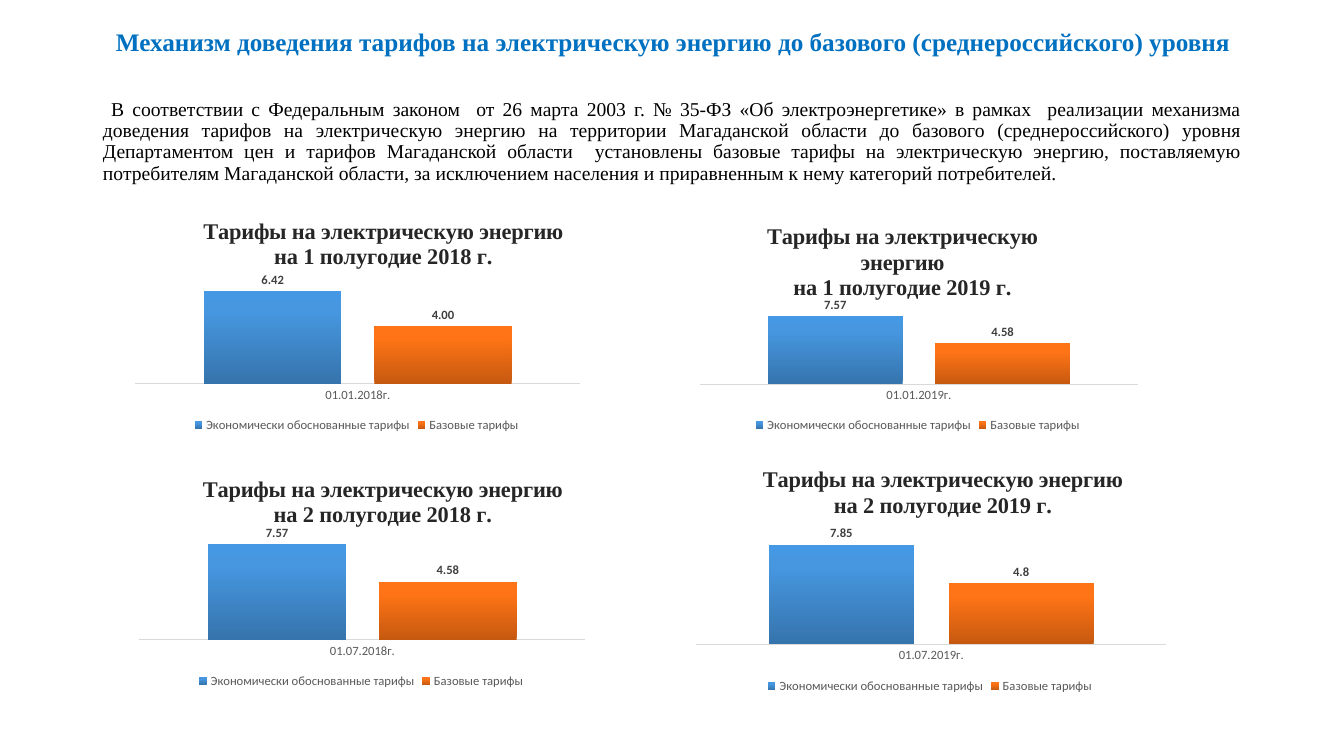
from dataclasses import dataclass
from typing import Any

from pptx import Presentation
from pptx.chart.data import CategoryChartData
from pptx.dml.color import RGBColor
from pptx.enum.chart import XL_CHART_TYPE, XL_LABEL_POSITION, XL_LEGEND_POSITION, XL_TICK_MARK
from pptx.enum.text import MSO_ANCHOR, MSO_AUTO_SIZE, PP_ALIGN
from pptx.oxml import parse_xml
from pptx.oxml.ns import nsdecls
from pptx.util import Cm, Pt

COLUMNS = XL_CHART_TYPE.COLUMN_CLUSTERED
OUTSIDE_END = XL_LABEL_POSITION.OUTSIDE_END
BOTTOM = XL_LEGEND_POSITION.BOTTOM
NO_TICK = XL_TICK_MARK.NONE
MIDDLE, TOP = MSO_ANCHOR.MIDDLE, MSO_ANCHOR.TOP
NO_FIT = MSO_AUTO_SIZE.NONE
CENTER, JUSTIFY = PP_ALIGN.CENTER, PP_ALIGN.JUSTIFY

BLUE = RGBColor(0x00, 0x70, 0xC0)
BLACK = RGBColor(0x00, 0x00, 0x00)
TITLE_GRAY = RGBColor(0x26, 0x26, 0x26)
LABEL_GRAY = RGBColor(0x40, 0x40, 0x40)
AXIS_GRAY = RGBColor(0x59, 0x59, 0x59)
LINE_GRAY = RGBColor(0xD9, 0xD9, 0xD9)
JUSTIFIED_BLUES = (
    RGBColor(0x36, 0x74, 0xAD), RGBColor(0x46, 0x97, 0xE0), RGBColor(0x44, 0x98, 0xE4))
BASE_ORANGES = (
    RGBColor(0xC6, 0x59, 0x10), RGBColor(0xFF, 0x74, 0x16), RGBColor(0xFF, 0x75, 0x17))
GRADIENT_STOPS = (0, 80, 100)

SERIF, SANS = "Times New Roman", "Calibri"
HEADING = "Механизм доведения тарифов на электрическую энергию до базового (среднероссийского) уровня"
INTRO = (
    " В соответствии с Федеральным законом  от 26 марта 2003 г. № 35-ФЗ «Об электроэнергетике» "
    "в рамках  реализации механизма доведения тарифов на электрическую энергию на территории "
    "Магаданской области до базового (среднероссийского) уровня Департаментом цен и тарифов "
    "Магаданской области  установлены базовые тарифы на электрическую энергию, поставляемую "
    "потребителям Магаданской области, за исключением населения и приравненным к нему категорий "
    "потребителей."
)


@dataclass(frozen=True)
class TextFormat:
    font: str
    size: float
    color: RGBColor
    bold: bool = False


@dataclass(frozen=True)
class TextBlock:
    text: str
    position: dict[str, Any]
    frame: dict[str, Any]
    para: dict[str, Any]
    style: TextFormat


@dataclass(frozen=True)
class TariffChart:
    half: int
    year: int
    left: float
    top: float
    width: float
    height: float
    justified: float
    base: float
    base_format: str
    title_at: tuple[float, float]
    plot_top: float
    plot_height: float


TEXT_BLOCKS = (
    TextBlock(
        HEADING,
        {"left": Cm(2.36), "top": Cm(0.38), "width": Cm(29.21), "height": Cm(2.21)},
        {"vertical_anchor": MIDDLE, "margin_bottom": Cm(0.92)},
        {"alignment": CENTER, "line_spacing": 0.9},
        TextFormat(SERIF, 18, BLUE, True),
    ),
    TextBlock(
        INTRO,
        {"left": Cm(2.34), "top": Cm(2.38), "width": Cm(29.21), "height": Cm(2.87)},
        {"vertical_anchor": TOP},
        {"alignment": JUSTIFY, "line_spacing": 0.9, "space_before": Pt(10)},
        TextFormat(SERIF, 14, BLACK),
    ),
)
CHARTS = (
    TariffChart(1, 2018, 3.18, 5.23, 11.68, 5.77, 6.42, 4, "0.00", (0.16, 0.03), 0.33, 0.44),
    TariffChart(2, 2018, 3.28, 11.68, 11.71, 5.77, 7.57, 4.58, "General", (0.15, 0.04), 0.33, 0.44),
    TariffChart(1, 2019, 17.42, 5.31, 11.48, 5.69, 7.57, 4.58, "General", (0.16, 0.04), 0.45, 0.32),
    TariffChart(2, 2019, 17.3, 11.48, 12.34, 6.1, 7.85, 4.8, "General", (0.15, 0.03), 0.36, 0.42),
)


def apply(target: Any, values: dict[str, Any]) -> None:
    for name, value in values.items():
        setattr(target, name, value)


def format_font(font: Any, style: TextFormat) -> None:
    apply(font, {"name": style.font, "size": Pt(style.size), "bold": style.bold})
    font.color.rgb = style.color


def fill_placeholder(box: Any, block: TextBlock) -> None:
    apply(box, block.position)
    frame = box.text_frame
    apply(frame, {"word_wrap": True, "auto_size": NO_FIT, **block.frame})
    para = frame.paragraphs[0]
    apply(para, block.para)
    properties = para._p.get_or_add_pPr()
    properties.set("marL", "0")
    properties.set("indent", "0")
    properties.append(parse_xml(f"<a:buNone {nsdecls('a')}/>"))
    span = para.add_run()
    span.text = block.text
    format_font(span.font, block.style)


def set_layout(element: Any, fractions: dict[str, float], inner: bool = False) -> None:
    target = '<c:layoutTarget val="inner"/>' if inner else ""
    modes = "".join(f'<c:{axis}Mode val="edge"/>' for axis in "xy")
    sizes = "".join(f'<c:{name} val="{value}"/>' for name, value in fractions.items())
    layout = parse_xml(
        f"<c:layout {nsdecls('c')}><c:manualLayout>{target}{modes}{sizes}"
        "</c:manualLayout></c:layout>")
    for old in element.findall(layout.tag):
        element.remove(old)
    element.insert(0 if inner else 1, layout)


def fill_gradient(series: Any, colors: tuple[RGBColor, ...]) -> None:
    stops = "".join(
        f'<a:gs pos="{stop * 1000}"><a:srgbClr val="{color}"/></a:gs>'
        for stop, color in zip(GRADIENT_STOPS, colors))
    series._element.get_or_add_spPr().insert(0, parse_xml(
        f"<a:gradFill {nsdecls('a')}><a:gsLst>{stops}</a:gsLst>"
        '<a:lin ang="16200000" scaled="0"/></a:gradFill>'))


def add_tariff_chart(page: Any, item: TariffChart) -> None:
    data = CategoryChartData()
    data.categories = [f"01.{6 * item.half - 5:02d}.{item.year}г."]
    data.add_series("Экономически обоснованные тарифы", [item.justified])
    data.add_series("Базовые тарифы ", [item.base])
    lengths = [Cm(value) for value in (item.left, item.top, item.width, item.height)]
    chart = page.shapes.add_chart(COLUMNS, *lengths, data).chart
    format_font(chart.font, TextFormat(SANS, 10, BLACK))

    chart.has_title = True
    frame = chart.chart_title.text_frame
    frame.text = f"Тарифы на электрическую энергию\n на {item.half} полугодие {item.year} г. "
    for para in frame.paragraphs:
        format_font(para.runs[0].font, TextFormat(SERIF, 16, TITLE_GRAY, True))
    chart.chart_title.include_in_layout = False
    set_layout(chart.chart_title._element, dict(zip("xy", item.title_at)))
    set_layout(
        chart._chartSpace.chart.plotArea,
        {"x": 0.02, "y": item.plot_top, "w": 0.96, "h": item.plot_height}, inner=True)

    chart.has_legend = True
    apply(chart.legend, {"position": BOTTOM, "include_in_layout": False})
    format_font(chart.legend.font, TextFormat(SANS, 9, AXIS_GRAY))

    apply(chart.category_axis, {"major_tick_mark": NO_TICK, "minor_tick_mark": NO_TICK})
    format_font(chart.category_axis.tick_labels.font, TextFormat(SANS, 9, AXIS_GRAY))
    line = chart.category_axis.format.line
    line.color.rgb = LINE_GRAY
    line.width = Pt(1)
    apply(chart.value_axis, {
        "has_major_gridlines": False, "minimum_scale": 0,
        "maximum_scale": 7 if item.justified < 7 else 8, "visible": False})
    apply(chart.value_axis.tick_labels, {"number_format": "0.00", "number_format_is_linked": False})

    plot = chart.plots[0]
    apply(plot, {"gap_width": 100, "overlap": -24, "vary_by_categories": False})
    looks = ((JUSTIFIED_BLUES, "0.00"), (BASE_ORANGES, item.base_format))
    for series, (colors, number_format) in zip(plot.series, looks):
        fill_gradient(series, colors)
        labels = series.data_labels
        apply(labels, {
            "show_value": True, "position": OUTSIDE_END,
            "number_format": number_format, "number_format_is_linked": False})
        format_font(labels.font, TextFormat(SANS, 9, LABEL_GRAY, True))


def main() -> None:
    deck = Presentation()
    apply(deck, {"slide_width": Cm(33.87), "slide_height": Cm(19.05)})
    page = deck.slides.add_slide(deck.slide_layouts[1])
    for box, block in zip(page.placeholders, TEXT_BLOCKS):
        fill_placeholder(box, block)
    for item in CHARTS:
        add_tariff_chart(page, item)
    deck.save("out.pptx")


if __name__ == "__main__":
    main()
